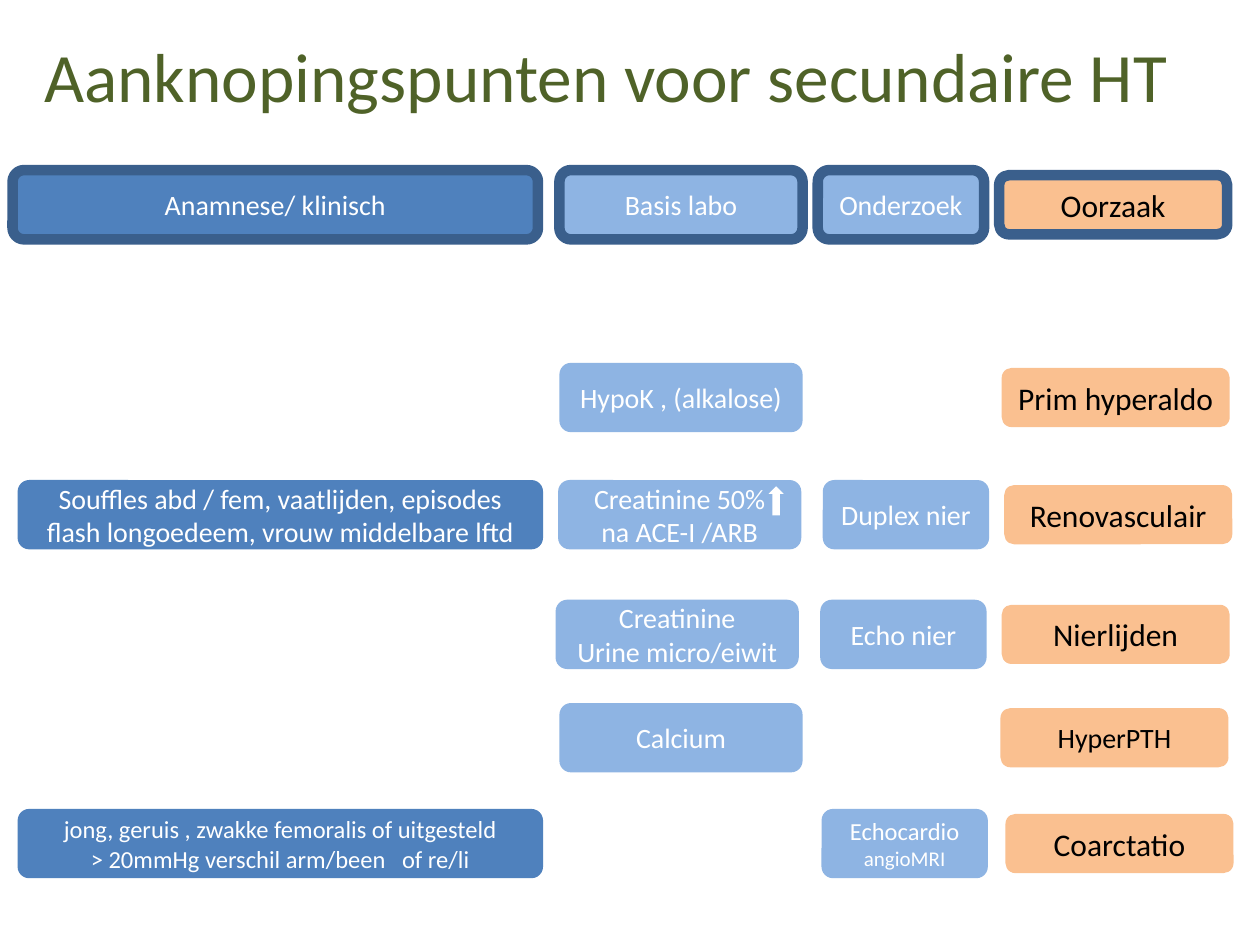
from pptx import Presentation
from pptx.dml.color import RGBColor
from pptx.enum import shapes, text
from pptx.util import Inches, Pt

GREEN = RGBColor(0x4F, 0x62, 0x28)
BLUE = RGBColor(0x4F, 0x81, 0xBD)
LIGHT = RGBColor(0x8E, 0xB4, 0xE3)
PEACH = RGBColor(0xFA, 0xC0, 0x90)
NAVY = RGBColor(0x3A, 0x5F, 0x8C)
WHITE = RGBColor(0xFF, 0xFF, 0xFF)
BLACK = RGBColor(0x00, 0x00, 0x00)

CLINIC = dict(width=4.17, fill=BLUE)
LAB = dict(width=1.93, fill=LIGHT)
EXAM = dict(width=1.32, fill=LIGHT)
CAUSE = dict(width=1.81, height=0.47, fill=PEACH, color=BLACK, size=18, inset=0.05)
ROW = 0.55

HEADS = [
    (CLINIC, 0.10, "Anamnese/ klinisch"),
    (LAB, 4.44, "Basis labo"),
    (EXAM, 6.49, "Onderzoek"),
    (CAUSE, 7.93, "Oorzaak"),
]
ROWS = [
    (2.88, [
        (LAB, 4.44, "HypoK , (alkalose)", {}),
        (CAUSE, 7.95, "Prim hyperaldo", {}),
    ]),
    (3.81, [
        (CLINIC, 0.14, "Souffles abd / fem, vaatlijden, episodes "
                       "flash longoedeem, vrouw middelbare lftd", {}),
        (LAB, 4.43, "Creatinine 50%\nna ACE-I /ARB", {}),
        (EXAM, 6.53, "Duplex nier", {}),
        (CAUSE, 7.97, "Renovasculair", {}),
    ]),
    (4.76, [
        (LAB, 4.41, "Creatinine\nUrine micro/eiwit", {}),
        (EXAM, 6.51, "Echo nier", {}),
        (CAUSE, 7.95, "Nierlijden", {}),
    ]),
    (5.58, [
        (LAB, 4.44, "Calcium", {}),
        (CAUSE, 7.94, "HyperPTH", dict(size=16)),
    ]),
    (6.42, [
        (CLINIC, 0.14, "jong, geruis , zwakke femoralis of uitgesteld\n"
                       "> 20mmHg verschil arm/been   of re/li", dict(size=14)),
        (EXAM, 6.52, "Echocardio\nangioMRI", dict(size=14, last=12)),
        (CAUSE, 7.98, "Coarctatio", {}),
    ]),
]


def write(shape, words, size=16, last=None, color=WHITE, inset=0.1):
    frame = shape.text_frame
    frame.text = words
    frame.word_wrap = True
    frame.auto_size = text.MSO_AUTO_SIZE.NONE
    frame.vertical_anchor = text.MSO_ANCHOR.MIDDLE
    frame.margin_left = frame.margin_right = Inches(inset)
    for para in frame.paragraphs:
        para.alignment = text.PP_ALIGN.CENTER
        para.font.name = "Calibri"
        para.font.size = Pt(size)
        para.font.color.rgb = color
    if last:
        frame.paragraphs[-1].font.size = Pt(last)


def draw(slide, kind, left, top, width, height, fill, edge=None):
    shape = slide.shapes.add_shape(
        kind, Inches(left), Inches(top), Inches(width), Inches(height))
    shape.shadow.inherit = False
    shape.fill.solid()
    shape.fill.fore_color.rgb = fill
    if edge:
        shape.line.color.rgb = edge
        shape.line.width = Pt(6)
    else:
        shape.line.fill.background()
    return shape


def box(slide, left, row, words, width, fill, height=ROW, edge=None, **style):
    top = row + (ROW - height) / 2
    shape = draw(slide, shapes.MSO_SHAPE.ROUNDED_RECTANGLE,
                 left, top, width, height, fill, edge)
    write(shape, words, **style)


def head(slide, words):
    title = slide.shapes.title
    title.left, title.top = Inches(0.11), Inches(0.29)
    title.width, title.height = Inches(9.4), Inches(0.61)
    write(title, words, size=39.6, color=GREEN)


def main():
    deck = Presentation()
    deck.slide_width, deck.slide_height = Inches(10), Inches(7.5)
    slide = deck.slides.add_slide(deck.slide_layouts[5])
    head(slide, "Aanknopingspunten voor secundaire HT")
    for column, left, words in HEADS:
        box(slide, left, 1.35, words, edge=NAVY, **column)
    for row, cells in ROWS:
        for column, left, words, style in cells:
            box(slide, left, row, words, **{**column, **style})
    draw(slide, shapes.MSO_SHAPE.UP_ARROW, 6.1, 3.86, 0.12, 0.23, WHITE)
    deck.save("out.pptx")


if __name__ == "__main__":
    main()
